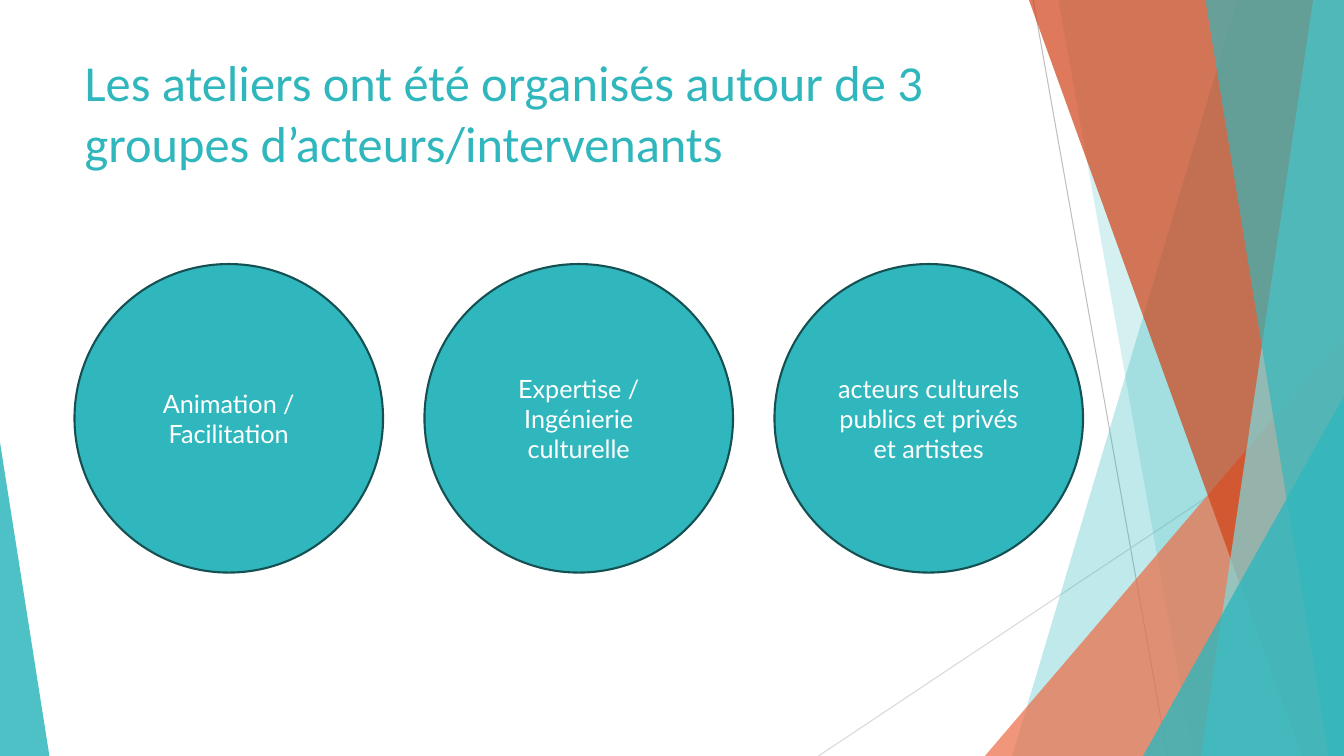
"""Build the slide presenting the three groups of workshop participants."""
from lxml.etree import SubElement
from pptx import Presentation
from pptx.dml.color import RGBColor
from pptx.enum.shapes import MSO_CONNECTOR, MSO_SHAPE
from pptx.enum.text import MSO_ANCHOR, MSO_AUTO_SIZE, PP_ALIGN
from pptx.oxml.ns import qn
from pptx.util import Pt

TEAL = RGBColor(0x30, 0xB7, 0xBD)
LIGHT_TEAL = RGBColor(0x7C, 0xDA, 0xDE)
DARK_TEAL = RGBColor(0x15, 0x50, 0x53)
ORANGE = RGBColor(0xEC, 0x6E, 0x47)
RUST = RGBColor(0xD1, 0x42, 0x16)
GREY = RGBColor(0xBF, 0xBF, 0xBF)
LIGHT_GREY = RGBColor(0xD9, 0xD9, 0xD9)
WHITE = RGBColor(0xFF, 0xFF, 0xFF)

WIDTH, HEIGHT = 960, 540
TITLE = "Les ateliers ont été organisés autour de 3 groupes d’acteurs/intervenants"
GROUPS = [
    ["Animation /", "Facilitation"],
    ["Expertise /", "Ingénierie culturelle"],
    ["acteurs culturels publics et privés et artistes"],
]
CIRCLE_LEFT, CIRCLE_TOP, DIAMETER, STEP = 53.2, 188.6, 220.4, 250

LINES = [
    (738, 0, 834, HEIGHT, GREY),
    (WIDTH, 290, 584.6, HEIGHT, LIGHT_GREY),
]
DECORATIONS = [
    ("band", (884, 723), TEAL, 30),
    ("band", (756, 852), TEAL, 20),
    ("triangle", (703.5, 239.8, 256.5, 1), ORANGE, 72),
    ("band", (735, 929.5), RUST, 70),
    ("band", (938, 858), LIGHT_TEAL, 70),
    ("band", (861, 949), TEAL, 65),
    ("triangle", (816.5, 283, 143.5, 1), TEAL, 80),
    ("triangle", (0, 316, 35.3, 0), TEAL, 85),
]


def add_line(slide, x1, y1, x2, y2, color):
    line = slide.shapes.add_connector(
        MSO_CONNECTOR.STRAIGHT, Pt(x1), Pt(y1), Pt(x2), Pt(y2))
    line.line.color.rgb = color
    line.line.width = Pt(0.75)
    SubElement(line._element.spPr, qn("a:effectLst"))


def add_band(slide, top_x, bottom_x):
    builder = slide.shapes.build_freeform(top_x, 0, scale=Pt(1))
    builder.add_line_segments([(WIDTH, 0), (WIDTH, HEIGHT), (bottom_x, HEIGHT)])
    return builder.convert_to_shape()


def add_triangle(slide, left, top, width, apex):
    shape = slide.shapes.add_shape(
        MSO_SHAPE.ISOSCELES_TRIANGLE, Pt(left), Pt(top), Pt(width), Pt(HEIGHT - top))
    shape.adjustments[0] = apex
    return shape


def add_decoration(slide, kind, geometry, color, opacity):
    shape = (add_band if kind == "band" else add_triangle)(slide, *geometry)
    shape.shadow.inherit = False
    shape.line.fill.background()
    shape.fill.solid()
    shape.fill.fore_color.rgb = color
    color_element = shape._element.spPr.find(qn("a:solidFill"))[0]
    SubElement(color_element, qn("a:alpha"), val=str(opacity * 1000))


def add_title(slide):
    title = slide.shapes.title
    title.left, title.top, title.width, title.height = (
        Pt(53.2), Pt(23), Pt(677), Pt(103.7))
    frame = title.text_frame
    frame.word_wrap = True
    frame.auto_size = MSO_AUTO_SIZE.NONE
    frame.vertical_anchor = MSO_ANCHOR.BOTTOM
    paragraph = frame.paragraphs[0]
    paragraph.alignment = PP_ALIGN.LEFT
    add_run(paragraph, TITLE, "Calibri", 36, TEAL)


def add_run(paragraph, text, font_name, size, color):
    run = paragraph.add_run()
    run.text = text
    run.font.name = font_name
    run.font.size = Pt(size)
    run.font.color.rgb = color


def add_group(slide, index, lines):
    circle = slide.shapes.add_shape(
        MSO_SHAPE.OVAL, Pt(CIRCLE_LEFT + index * STEP), Pt(CIRCLE_TOP),
        Pt(DIAMETER), Pt(DIAMETER))
    circle.shadow.inherit = False
    circle.fill.solid()
    circle.fill.fore_color.rgb = TEAL
    circle.line.color.rgb = DARK_TEAL
    circle.line.width = Pt(1.5)
    frame = circle.text_frame
    frame.word_wrap = True
    frame.vertical_anchor = MSO_ANCHOR.MIDDLE
    paragraph = frame.paragraphs[0]
    paragraph.alignment = PP_ALIGN.CENTER
    for number, text in enumerate(lines):
        if number:
            paragraph.add_line_break()
        add_run(paragraph, text, "Lato", 18, WHITE)


def main():
    presentation = Presentation()
    presentation.slide_width, presentation.slide_height = Pt(WIDTH), Pt(HEIGHT)
    slide = presentation.slides.add_slide(presentation.slide_layouts[5])
    for line in LINES:
        add_line(slide, *line)
    for decoration in DECORATIONS:
        add_decoration(slide, *decoration)
    add_title(slide)
    for index, lines in enumerate(GROUPS):
        add_group(slide, index, lines)
    presentation.save("out.pptx")


if __name__ == "__main__":
    main()
